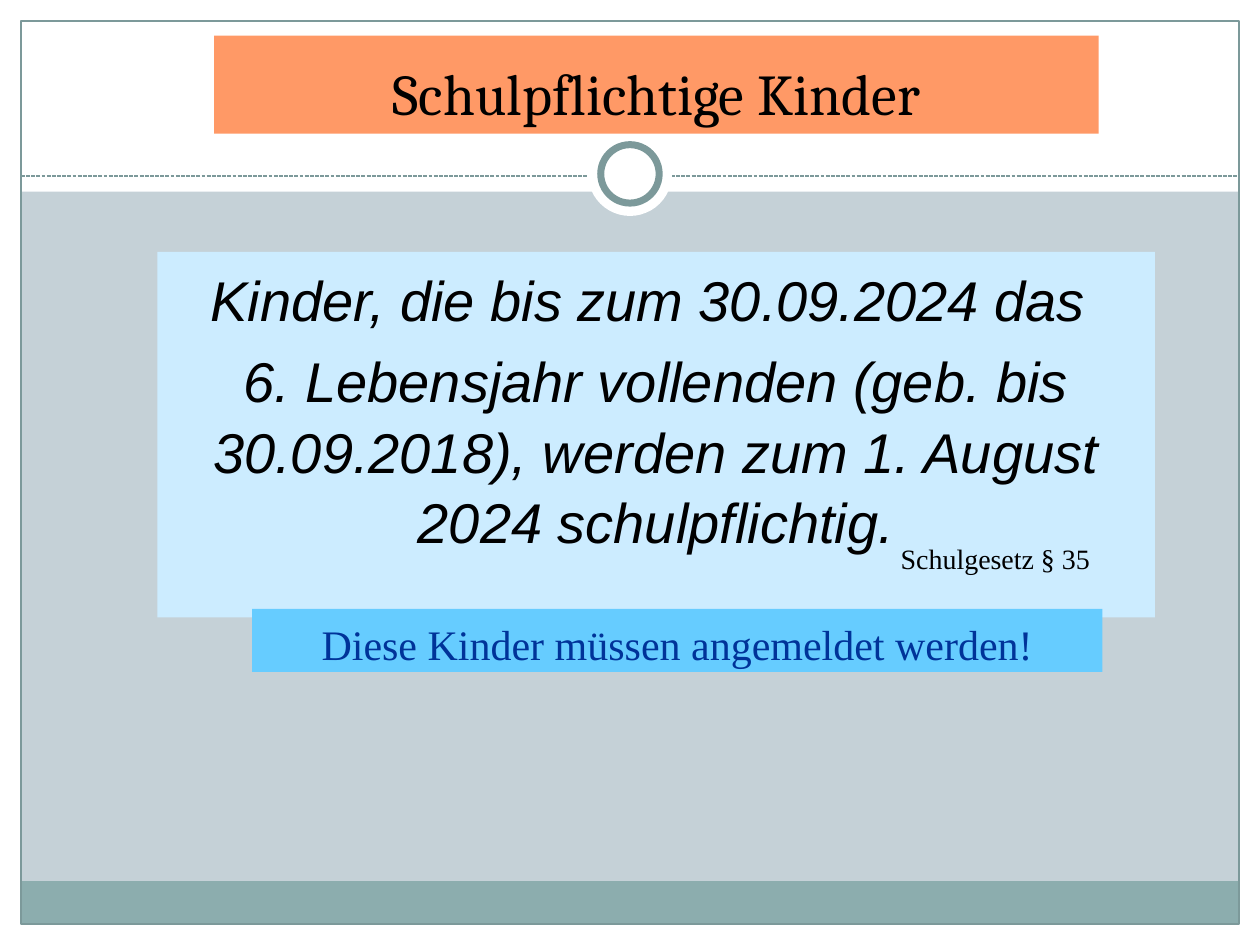
import pptx
import pptx.util
import pptx.dml.color
import pptx.enum.dml
import pptx.enum.shapes
import pptx.enum.text
from dataclasses import dataclass
from lxml import etree

Pt = pptx.util.Pt
SHAPE = pptx.enum.shapes.MSO_SHAPE
ALIGN = pptx.enum.text.PP_ALIGN
ANCHOR = pptx.enum.text.MSO_ANCHOR


@dataclass(frozen=True)
class Theme:
    background: str = "C5D1D7"
    white: str = "FFFFFF"
    black: str = "000000"
    frame: str = "7C999A"
    footer: str = "8CADAE"
    title_fill: str = "FF9966"
    rule_fill: str = "CCECFF"
    notice_fill: str = "66CCFF"
    notice_text: str = "003399"
    title_size: float = 33
    rule_size: float = 32
    notice_size: float = 24
    source_size: float = 16


THEME = Theme()
WIDTH, HEIGHT = 720, 540
MARGIN = 12


def color(value):
    return pptx.dml.color.RGBColor.from_string(value)


def apply(target, values):
    for name, value in values.items():
        setattr(target, name, value)


def place(shape, left, top, width, height):
    apply(shape, {"left": Pt(left), "top": Pt(top),
                  "width": Pt(width), "height": Pt(height)})


def paint(shape, fill):
    shape.fill.solid()
    shape.fill.fore_color.rgb = color(fill)


def add_panel(page, bounds, fill=None, line=None, weight=0.75, kind=SHAPE.RECTANGLE):
    panel = page.shapes.add_shape(kind, *map(Pt, bounds))
    panel.shadow.inherit = False
    if fill:
        paint(panel, fill)
    else:
        panel.fill.background()
    if line:
        panel.line.color.rgb = color(line)
        panel.line.width = Pt(weight)
    else:
        panel.line.fill.background()
    return panel


def add_dashed_line(page, left, right, top):
    line = page.shapes.add_connector(
        pptx.enum.shapes.MSO_CONNECTOR.STRAIGHT, Pt(left), Pt(top), Pt(right), Pt(top))
    line.line.color.rgb = color(THEME.frame)
    apply(line.line, {"width": Pt(0.75),
                      "dash_style": pptx.enum.dml.MSO_LINE.SQUARE_DOT})
    properties = line._element.spPr
    etree.SubElement(properties, pptx.oxml.ns.qn("a:effectLst"))


def write(shape, texts, font, ink, align=ALIGN.CENTER, anchor=ANCHOR.TOP,
          inset=5.6, leading=1.0, gap=0):
    box = shape.text_frame
    apply(box, {"word_wrap": True, "vertical_anchor": anchor,
                "auto_size": pptx.enum.text.MSO_AUTO_SIZE.NONE,
                "margin_left": Pt(7.2), "margin_right": Pt(7.2),
                "margin_top": Pt(inset), "margin_bottom": Pt(3.6)})
    for index, text in enumerate(texts):
        para = box.add_paragraph() if index else box.paragraphs[0]
        apply(para, {"alignment": align, "line_spacing": leading,
                     "space_before": Pt(gap if index else 0)})
        span = para.add_run()
        span.text = text
        apply(span.font, font)
        span.font.color.rgb = color(ink)


def add_backdrop(page):
    page.background.fill.solid()
    page.background.fill.fore_color.rgb = color(THEME.background)
    inner = WIDTH - 2 * MARGIN
    # White border and heading band
    for bounds in ((0, HEIGHT - MARGIN, WIDTH, MARGIN), (0, 0, WIDTH, 109.5),
                   (0, 0, MARGIN, HEIGHT), (WIDTH - MARGIN, 0, MARGIN, HEIGHT)):
        add_panel(page, bounds, THEME.white)
    # Footer bar, frame and divider
    add_panel(page, (MARGIN, 503.5, inner, 24.5), THEME.footer)
    add_panel(page, (MARGIN, MARGIN, inner, HEIGHT - 2 * MARGIN), line=THEME.frame)
    add_dashed_line(page, MARGIN, WIDTH - MARGIN, 100.6)
    # Ring on the divider
    for diameter, line in ((48, None), (33.4, THEME.frame)):
        bounds = ((WIDTH - diameter) / 2, 99.4 - diameter / 2, diameter, diameter)
        add_panel(page, bounds, THEME.white, line, 4, SHAPE.OVAL)


def add_title(page, text):
    title = page.shapes.title
    title._element.getparent().append(title._element)  # in front of the backdrop
    place(title, 122.4, 20.4, 505.4, 56)
    paint(title, THEME.title_fill)
    write(title, [text], {"name": "Cambria", "size": Pt(THEME.title_size)},
          THEME.black, anchor=ANCHOR.BOTTOM, inset=3.6)


def main():
    deck = pptx.Presentation()
    apply(deck, {"slide_width": Pt(WIDTH), "slide_height": Pt(HEIGHT)})
    page = deck.slides.add_slide(deck.slide_layouts[5])
    add_backdrop(page)
    add_title(page, "Schulpflichtige Kinder")

    # Rule
    rule = add_panel(page, (90, 144, 570, 208.8), THEME.rule_fill)
    write(rule, ["Kinder, die bis zum 30.09.2024 das ",
                 "6. Lebensjahr vollenden (geb. bis 30.09.2018), "
                 "werden zum 1. August 2024 schulpflichtig."],
          {"name": "Arial", "size": Pt(THEME.rule_size), "italic": True},
          THEME.black, leading=1.05, gap=6.4)

    # Legal source
    source = page.shapes.add_textbox(*map(Pt, (507.6, 303.8, 147.6, 26.6)))
    write(source, ["Schulgesetz § 35"],
          {"name": "Times New Roman", "size": Pt(THEME.source_size)},
          THEME.black, align=ALIGN.LEFT)

    # Notice
    notice = add_panel(page, (144, 348, 486, 36), THEME.notice_fill)
    write(notice, ["Diese Kinder müssen angemeldet werden!"],
          {"name": "Times New Roman", "size": Pt(THEME.notice_size)},
          THEME.notice_text)

    deck.save("out.pptx")


if __name__ == "__main__":
    main()
